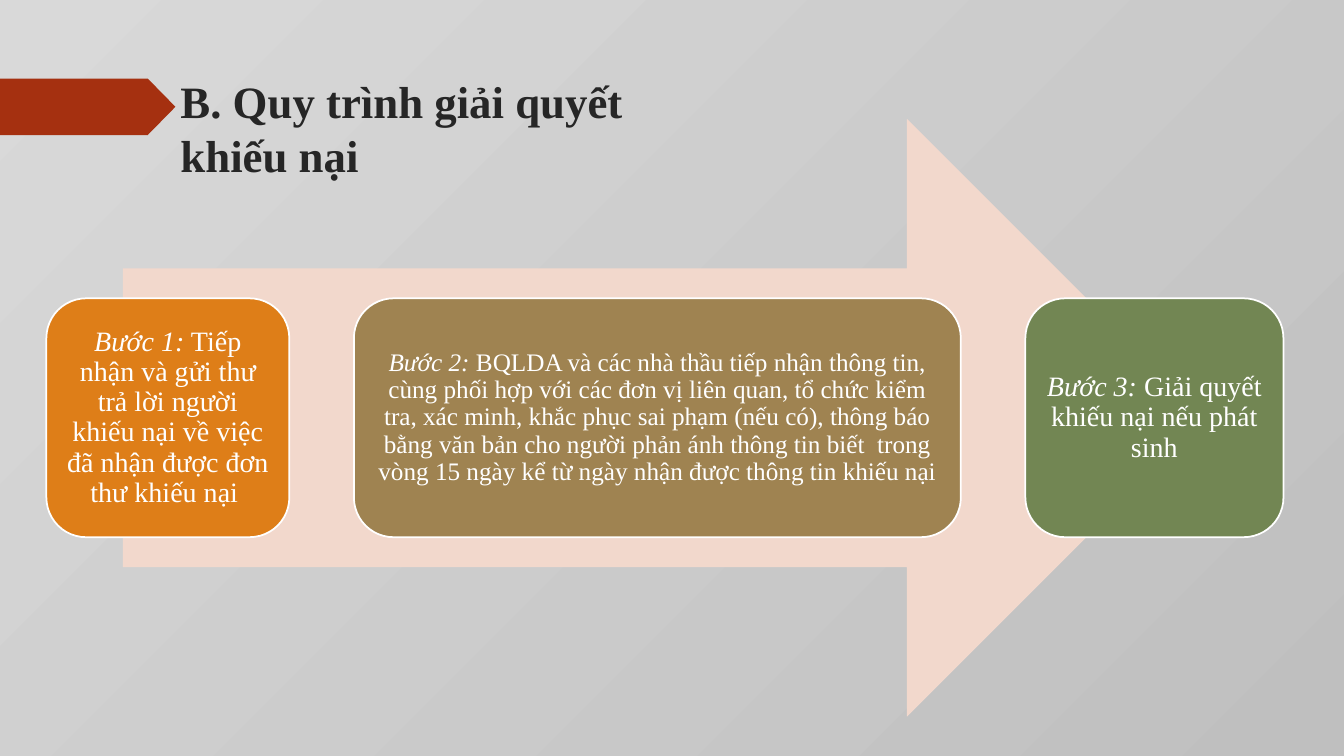
from pptx import Presentation
from pptx.dml.color import RGBColor
from pptx.enum.shapes import MSO_SHAPE
from pptx.enum.text import MSO_ANCHOR, MSO_AUTO_SIZE, PP_ALIGN
from pptx.util import Inches, Pt

TAG, ARROW, BOX = MSO_SHAPE.PENTAGON, MSO_SHAPE.RIGHT_ARROW, MSO_SHAPE.ROUNDED_RECTANGLE
TOP, MIDDLE = MSO_ANCHOR.TOP, MSO_ANCHOR.MIDDLE
LEFT, CENTER = PP_ALIGN.LEFT, PP_ALIGN.CENTER

THEME = {
    "font": "Times New Roman",
    "light": "D9D9D9", "dark": "BFBFBF",
    "tag": "A53010", "arrow": "F2D8CC",
    "title": "262626", "white": "FFFFFF",
    "title_size": 32,
}
STEPS = [  # width, fill, type size, inset, label, text
    (2.41, "DE7E18", 20, 0.08, "Bước 1:",
     " Tiếp nhận và gửi thư trả lời người khiếu nại về việc đã nhận được đơn thư khiếu nại "),
    (6.02, "9F8351", 18, 0.07, "Bước 2: ",
     "BQLDA và các nhà thầu tiếp nhận thông tin, cùng phối hợp với các đơn vị liên quan, "
     "tổ chức kiểm tra, xác minh, khắc phục sai phạm (nếu có), thông báo bằng văn bản cho "
     "người phản ánh thông tin biết  trong vòng 15 ngày kể từ ngày nhận được thông tin khiếu nại"),
    (2.56, "728653", 20, 0.08, "Bước 3:", " Giải quyết khiếu nại nếu phát sinh"),
]
STEP_LEFT, STEP_TOP, STEP_HEIGHT, STEP_GAP = 0.46, 2.96, 2.37, 0.64


def add_filled(kind, left, top, width, height, color):
    sp = s.shapes.add_shape(kind, Inches(left), Inches(top), Inches(width), Inches(height))
    sp.shadow.inherit = False
    sp.fill.solid()
    sp.fill.fore_color.rgb = RGBColor.from_string(color)
    sp.line.fill.background()
    return sp


def add_run(p, text, size, color, **formats):
    r = p.add_run()
    r.text = text
    r.font.color.rgb = RGBColor.from_string(color)
    for name, value in {"name": THEME["font"], "size": Pt(size), **formats}.items():
        setattr(r.font, name, value)


prs = Presentation()
prs.slide_width, prs.slide_height = Inches(13.33), Inches(7.5)
s = prs.slides.add_slide(prs.slide_layouts[5])

# Background: light top left to dark bottom right
bg = s.background.fill
bg.gradient()
bg.gradient_angle = 315
for stop, name in zip(bg.gradient_stops, ("light", "dark")):
    stop.color.rgb = RGBColor.from_string(THEME[name])
    stop.position = 0 if name == "light" else 1

# Title and its tag
tag = add_filled(TAG, 0, 0.78, 1.74, 0.56, THEME["tag"])
tag.adjustments[0] = 0.49

title = s.shapes.title
for name, value in {"left": 1.69, "top": 0.68, "width": 4.86, "height": 1.4}.items():
    setattr(title, name, Inches(value))
tf = title.text_frame
tf.word_wrap, tf.auto_size, tf.vertical_anchor = True, MSO_AUTO_SIZE.NONE, TOP
p = tf.paragraphs[0]
p.alignment = LEFT
add_run(p, "B. Quy trình giải quyết khiếu nại", THEME["title_size"], THEME["title"], bold=True)

# Process arrow with its steps
add_filled(ARROW, 1.22, 1.18, 10.74, 5.93, THEME["arrow"])

left = STEP_LEFT
for width, fill, size, inset, label, text in STEPS:
    sp = add_filled(BOX, left, STEP_TOP, width, STEP_HEIGHT, fill)
    sp.line.color.rgb = RGBColor.from_string(THEME["white"])
    sp.line.width = Pt(1.25)
    tf = sp.text_frame
    tf.word_wrap, tf.vertical_anchor = True, MIDDLE
    for side in ("left", "top", "right", "bottom"):
        setattr(tf, f"margin_{side}", Inches(inset))
    p = tf.paragraphs[0]
    p.alignment, p.line_spacing = CENTER, 0.9
    add_run(p, label, size, THEME["white"], italic=True)
    add_run(p, text, size, THEME["white"], italic=False)
    left += width + STEP_GAP

prs.save("out.pptx")
